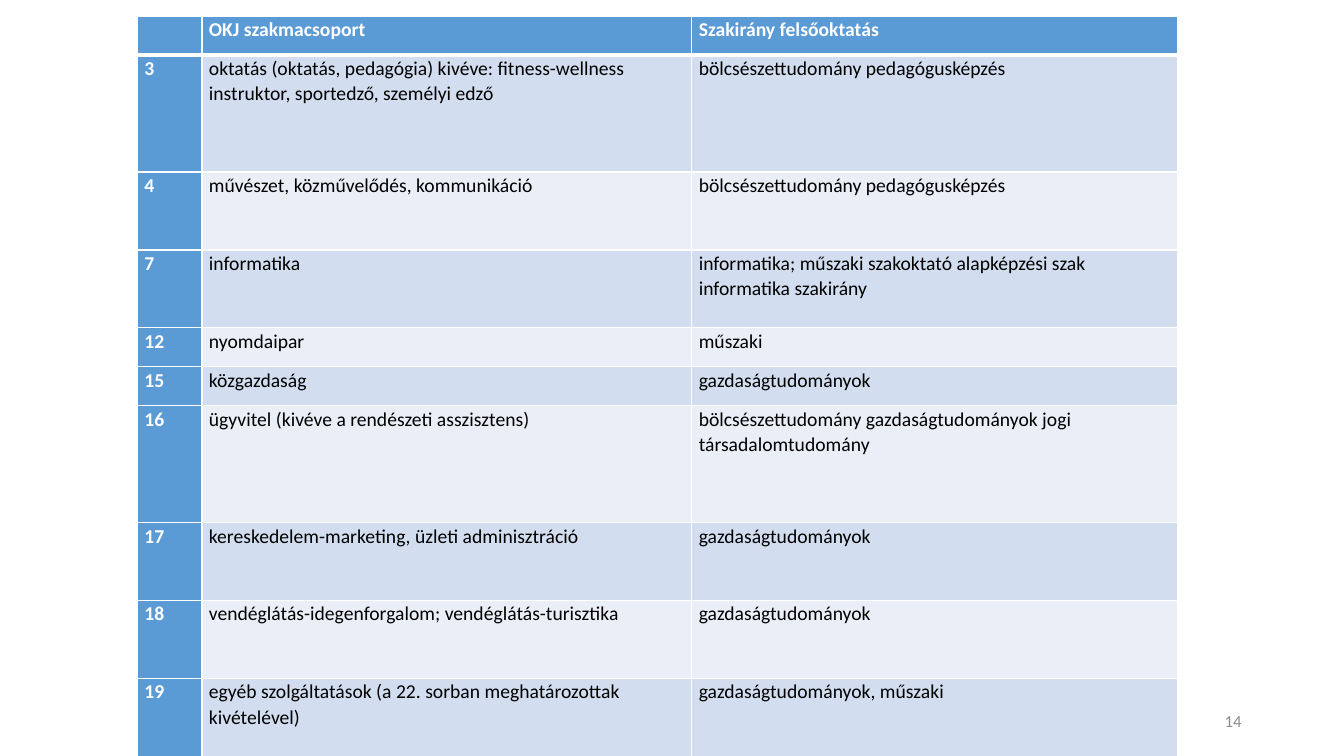
"""Builds a slide with a table matching vocational groups to higher-education fields."""
from dataclasses import dataclass

from lxml import etree
from pptx import Presentation
from pptx import util as u
from pptx.dml.color import RGBColor
from pptx.enum import text
from pptx.oxml.ns import qn

PX = 3048
FONT = "Calibri"
WHITE, BLACK, GREY, BLUE = "FFFFFF", "000000", "8C8C8C", "5B9BD5"
BANDS = ("D2DEEF", "EAEFF7")
COLUMNS = (192, 1458, 1446)
ROW_UNIT = 116


@dataclass
class Row:
    """One table row; its height is counted in row units."""
    number: str
    group: str
    field: str
    units: int


ROWS = [
    Row("", "OKJ szakmacsoport", "Szakirány felsőoktatás", 1),
    Row("3", "oktatás (oktatás, pedagógia) kivéve: fitness-wellness instruktor, sportedző, személyi edző",
        "bölcsészettudomány pedagógusképzés", 3),
    Row("4", "művészet, közművelődés, kommunikáció", "bölcsészettudomány pedagógusképzés", 2),
    Row("7", "informatika", "informatika; műszaki szakoktató alapképzési szak informatika szakirány", 2),
    Row("12", "nyomdaipar", "műszaki", 1),
    Row("15", "közgazdaság", "gazdaságtudományok", 1),
    Row("16", "ügyvitel (kivéve a rendészeti asszisztens)",
        "bölcsészettudomány gazdaságtudományok jogi társadalomtudomány", 3),
    Row("17", "kereskedelem-marketing, üzleti adminisztráció", "gazdaságtudományok", 2),
    Row("18", "vendéglátás-idegenforgalom; vendéglátás-turisztika", "gazdaságtudományok", 2),
    Row("19", "egyéb szolgáltatások (a 22. sorban meghatározottak kivételével)",
        "gazdaságtudományok, műszaki", 2),
]


def px(n: int) -> u.Emu:
    """Turn px into EMU."""
    return u.Emu(n * PX)


def color(hex_code: str) -> RGBColor:
    """Turn a hex string into a colour."""
    return RGBColor.from_string(hex_code)


def write(p, words: str, size: int, hex_code: str, bold: bool = False) -> None:
    """Set a paragraph's text and format its runs."""
    p.text = words
    for r in p.runs:
        r.font.name, r.font.size, r.font.bold = FONT, u.Pt(size), bold
        r.font.color.rgb = color(hex_code)


def add_borders(cell, top: int, bottom: int) -> None:
    """Give a cell white borders with the given top and bottom widths in points."""
    tc_pr = cell._tc.get_or_add_tcPr()
    for tag, width in (("a:lnL", 1), ("a:lnR", 1), ("a:lnT", top), ("a:lnB", bottom)):
        ln = etree.SubElement(tc_pr, qn(tag), w=str(u.Pt(width)))
        fill = etree.SubElement(ln, qn("a:solidFill"))
        etree.SubElement(fill, qn("a:srgbClr"), val=WHITE)


def fill_cell(cell, words: str, i: int, j: int) -> None:
    """Write and format the cell at row i, column j."""
    heading = i == 0 or j == 0
    cell.margin_left = cell.margin_right = px(21)
    cell.margin_top = cell.margin_bottom = 0
    add_borders(cell, 3 if i == 1 else 1, 3 if i == 0 else 1)
    cell.fill.solid()
    cell.fill.fore_color.rgb = color(BLUE if heading else BANDS[(i - 1) % 2])
    p = cell.text_frame.paragraphs[0]
    p.line_spacing = 1.07
    write(p, words, 14, WHITE if heading else BLACK, heading)


def add_groups_table(s) -> None:
    """Draw the table of vocational groups."""
    height = ROW_UNIT * sum(row.units for row in ROWS)
    table = s.shapes.add_table(len(ROWS), len(COLUMNS), px(409), px(48),
                               px(sum(COLUMNS)), px(height)).table
    table.first_col = True
    for column, width in zip(table.columns, COLUMNS):
        column.width = px(width)
    for i, row in enumerate(ROWS):
        table.rows[i].height = px(ROW_UNIT * row.units)
        for j, words in enumerate((row.number, row.group, row.field)):
            fill_cell(table.cell(i, j), words, i, j)


def add_page_number(s, number: str) -> None:
    """Draw the page number at the lower right."""
    tf = s.shapes.add_textbox(px(2825), px(2085), px(900), px(120)).text_frame
    tf.word_wrap = True
    tf.vertical_anchor = text.MSO_ANCHOR.MIDDLE
    p = tf.paragraphs[0]
    p.alignment = text.PP_ALIGN.RIGHT
    write(p, number, 12, GREY)


def main() -> None:
    """Build and save the slide."""
    prs = Presentation()
    prs.slide_width, prs.slide_height = px(4000), px(2250)
    s = prs.slides.add_slide(prs.slide_layouts[6])
    add_page_number(s, "14")
    add_groups_table(s)
    prs.save("out.pptx")


if __name__ == "__main__":
    main()
